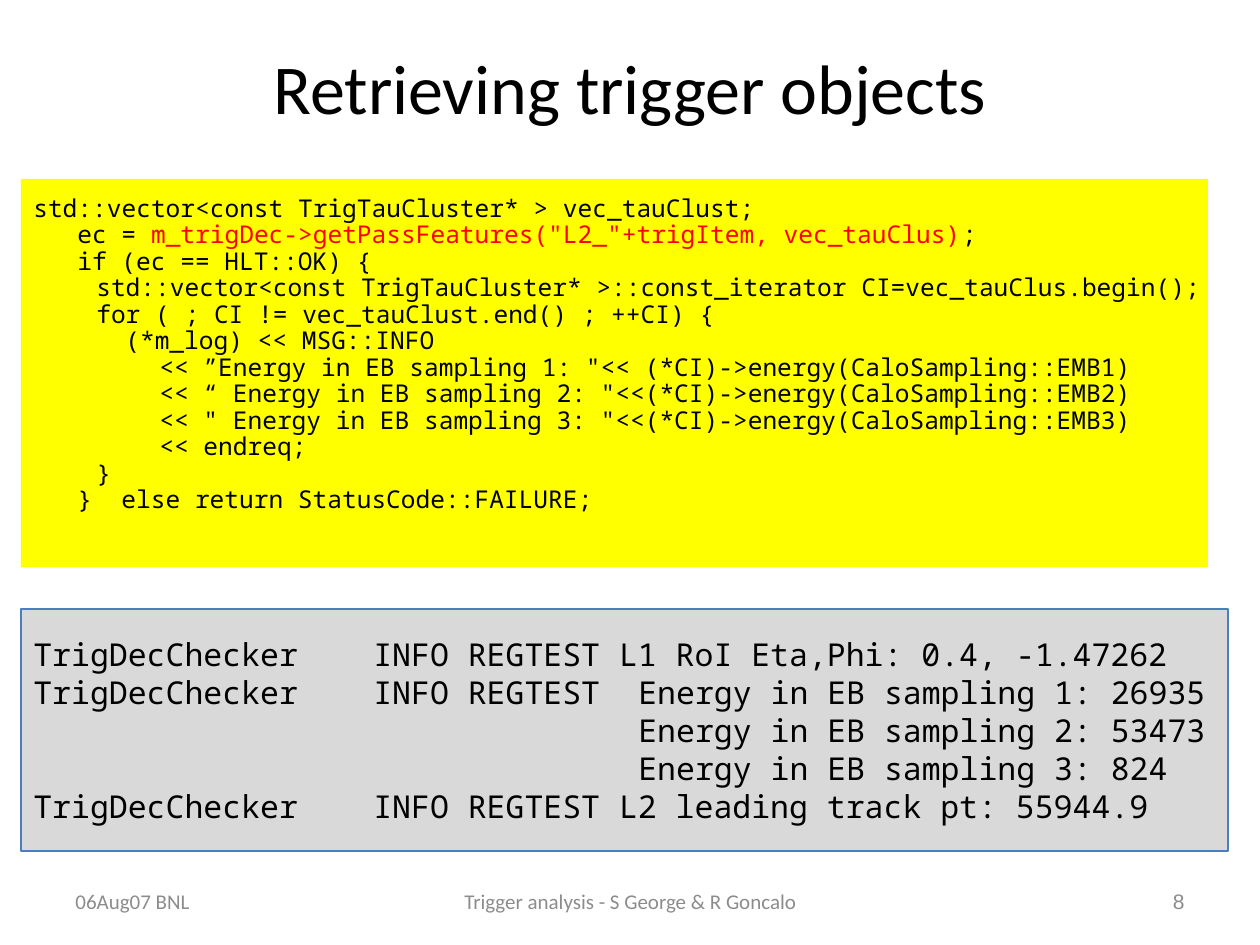
"""Build the slide on retrieving trigger objects."""
from lxml import etree
from pptx import Presentation
from pptx import util as u
from pptx.dml import color
from pptx.enum import shapes, text
from pptx.oxml import ns

SCALE = 914400 / 126
CODE_FONT = "Noto Sans Mono"
CALL = 'm_trigDec->getPassFeatures("L2_"+trigItem, vec_tauClus)'
STEP = 63
INFO_COLUMN = 340
VALUE_COLUMN = 605


def px(length):
    return u.Emu(round(length * SCALE))


def style(para, size, font, shade):
    for span in para.runs:
        span.font.size = u.Pt(size)
        span.font.name = font
        span.font.color.rgb = color.RGBColor.from_string(shade)


deck = Presentation()
deck.slide_width, deck.slide_height = px(1260), px(945)
page = deck.slides.add_slide(deck.slide_layouts[5])

title = page.shapes.title
title.left, title.top, title.width, title.height = px(63), px(38), px(1134), px(98)
title.text_frame.text = "Retrieving trigger objects"
title.text_frame.vertical_anchor = text.MSO_ANCHOR.MIDDLE
style(title.text_frame.paragraphs[0], 40, "Calibri", "000000")

code_lines = [
    (0, ["std::vector<const TrigTauCluster* > vec_tauClust;"]),
    (44, ["ec = ", CALL, ";"]),
    (44, ["if (ec == HLT::OK) {"]),
    (STEP, ["std::vector<const TrigTauCluster* >::const_iterator CI=vec_tauClus.begin();"]),
    (STEP, ["for ( ; CI != vec_tauClust.end() ; ++CI) {"]),
    (STEP + 29, ["(*m_log) << MSG::INFO"]),
    (2 * STEP, ['<< ”Energy in EB sampling 1: "<< (*CI)->energy(CaloSampling::EMB1)']),
    (2 * STEP, ['<< “ Energy in EB sampling 2: "<<(*CI)->energy(CaloSampling::EMB2)']),
    (2 * STEP, ['<< " Energy in EB sampling 3: "<<(*CI)->energy(CaloSampling::EMB3)']),
    (2 * STEP, ["<< endreq;"]),
    (STEP, ["}"]),
    (44, ["}  else return StatusCode::FAILURE;"]),
]
output_lines = [
    (0, ["TrigDecChecker\tINFO REGTEST L1 RoI Eta,Phi: 0.4, -1.47262"]),
    (0, ["TrigDecChecker\tINFO REGTEST\tEnergy in EB sampling 1: 26935"]),
    (VALUE_COLUMN, ["Energy in EB sampling 2: 53473"]),
    (VALUE_COLUMN, ["Energy in EB sampling 3: 824"]),
    (0, ["TrigDecChecker\tINFO REGTEST L2 leading track pt: 55944.9"]),
]
panels = [
    (179, 1187, 388, "FFFF00", None, 14, 0.9, text.MSO_ANCHOR.TOP, code_lines),
    (609, 1207, 242, "D9D9D9", "4B7EBC", 18, 1.0, text.MSO_ANCHOR.MIDDLE, output_lines),
]
for top, width, height, fill, line, size, spacing, anchor, lines in panels:
    box = page.shapes.add_shape(shapes.MSO_SHAPE.RECTANGLE, px(21), px(top), px(width), px(height))
    box.shadow.inherit = False
    box.fill.solid()
    box.fill.fore_color.rgb = color.RGBColor.from_string(fill)
    if line:
        box.line.color.rgb = color.RGBColor.from_string(line)
        box.line.width = u.Pt(0.75)
    else:
        box.line.fill.background()
    frame = box.text_frame
    frame.vertical_anchor = anchor
    frame.margin_right = 0
    if anchor == text.MSO_ANCHOR.TOP:
        frame.margin_top = px(17)
    for index, (indent, pieces) in enumerate(lines):
        para = frame.add_paragraph() if index else frame.paragraphs[0]
        para.alignment = text.PP_ALIGN.LEFT
        para.line_spacing = spacing
        for piece in pieces:
            para.add_run().text = piece
        style(para, size, CODE_FONT, "000000")
        for span in para.runs:
            if span.text == CALL:
                span.font.color.rgb = color.RGBColor.from_string("FF0000")
        properties = para._p.get_or_add_pPr()
        properties.set("marL", str(px(indent)))
        if "\t" in para.text:
            tabs = etree.SubElement(properties, ns.qn("a:tabLst"))
            for column in (INFO_COLUMN, VALUE_COLUMN):
                etree.SubElement(tabs, ns.qn("a:tab"), pos=str(px(column)), algn="l")

footers = [
    (63, 294, "06Aug07 BNL", "Calibri", text.PP_ALIGN.LEFT),
    (431, 399, "Trigger analysis - S George & R Goncalo", "Calibri", text.PP_ALIGN.CENTER),
    (903, 294, "8", "Arial", text.PP_ALIGN.RIGHT),
]
for left, width, words, font, alignment in footers:
    box = page.shapes.add_textbox(px(left), px(876), px(width), px(50))
    frame = box.text_frame
    frame.word_wrap = True
    frame.vertical_anchor = text.MSO_ANCHOR.MIDDLE
    frame.text = words
    frame.paragraphs[0].alignment = alignment
    style(frame.paragraphs[0], 12, font, "8C8C8C")

deck.save("out.pptx")
